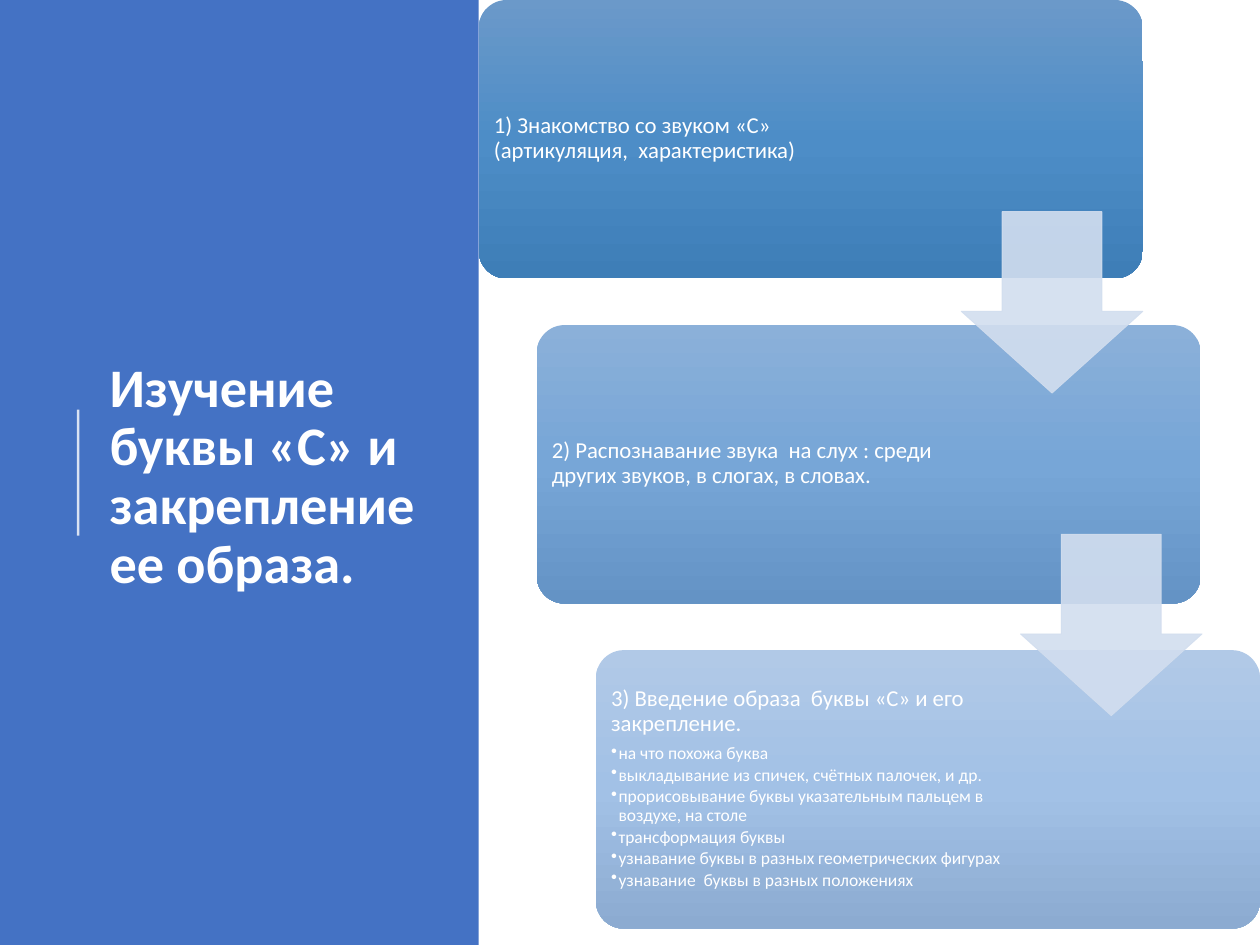
import copy
import lxml.etree
import pptx
import pptx.dml.color
import pptx.enum.shapes
import pptx.enum.text
import pptx.oxml.ns
import pptx.util

PX = 9144  # EMU per px, 100 px to the inch
THEME = {
    "font": "Calibri", "panel": "4472C4", "text": "FFFFFF", "arrow": "D2DEEF",
    "title": 31, "step": 13, "item": 10,
    "grads": [("6B99C9", "4D8DC7", "3E7EB7"),
              ("8BB0D9", "77A6D7", "6493C5"),
              ("B1C9E7", "A2C1E6", "8CABD1")],
}
STEPS = [
    ["1) Знакомство со звуком «С» (артикуляция,  характеристика)"],
    ["2) Распознавание звука  на слух : среди других звуков, в слогах, в словах."],
    ["3) Введение образа  буквы «С» и его закрепление.",
     "на что похожа буква",
     "выкладывание из спичек, счётных палочек, и др.",
     "прорисовывание буквы указательным пальцем в воздухе, на столе",
     "трансформация буквы",
     "узнавание буквы в разных геометрических фигурах",
     "узнавание  буквы в разных положениях"],
]
WIDTHS = [288, 324, 324]
KIND = pptx.enum.shapes.MSO_SHAPE
MID = pptx.enum.text.MSO_ANCHOR.MIDDLE
LEFT = pptx.enum.text.PP_ALIGN.LEFT
rgb = pptx.dml.color.RGBColor.from_string
qn = pptx.oxml.ns.qn


def style(par, size, bold=False):
    par.alignment = LEFT
    par.line_spacing = 0.9
    for run in par.runs:
        run.font.name = THEME["font"]
        run.font.size = pptx.util.Pt(size)
        run.font.bold = bold
        run.font.color.rgb = rgb(THEME["text"])


def fade(shape, share):
    for color in shape._element.spPr.iter(qn("a:srgbClr")):
        lxml.etree.SubElement(color, qn("a:alpha")).set("val", str(share * 1000))


prs = pptx.Presentation()
prs.slide_width, prs.slide_height = 1000 * PX, 750 * PX
slide = prs.slides.add_slide(prs.slide_layouts[5])
shapes = slide.shapes

# Left panel, behind the title
panel = shapes.add_shape(KIND.RECTANGLE, 0, 0, 380 * PX, 750 * PX)
panel.shadow.inherit = False
panel.fill.solid()
panel.fill.fore_color.rgb = rgb(THEME["panel"])
panel.line.fill.background()
shapes._spTree.insert(2, panel._element)

# Accent line
rule = shapes.add_connector(pptx.enum.shapes.MSO_CONNECTOR.STRAIGHT,
                            62 * PX, 425 * PX, 62 * PX, 325 * PX)
rule.line.width = pptx.util.Pt(1.5)
rule.line.color.rgb = rgb(THEME["text"])
lxml.etree.SubElement(rule._element.spPr, qn("a:effectLst"))
fade(rule, 80)

# Title
title = shapes.title
title.left, title.top, title.width, title.height = [n * PX for n in (77, 78, 276, 602)]
frame = title.text_frame
frame.text = "Изучение буквы «С» и закрепление ее образа."
frame.word_wrap = True
frame.auto_size = pptx.enum.text.MSO_AUTO_SIZE.NONE
frame.vertical_anchor = MID
style(frame.paragraphs[0], THEME["title"], True)

# Steps: a card and its text
for i, (lines, grad, width) in enumerate(zip(STEPS, THEME["grads"], WIDTHS)):
    left, top = 380 + 93 * i // 2, 258 * i
    card = shapes.add_shape(KIND.ROUNDED_RECTANGLE, left * PX, top * PX, 527 * PX, 221 * PX)
    card.adjustments[0] = 0.1
    card.shadow.inherit = False
    card.line.fill.background()
    card.fill.gradient()
    card.fill.gradient_angle = 270
    first = card._element.spPr.find(".//" + qn("a:gs"))
    first.addnext(copy.deepcopy(first))
    for k, (stop, color) in enumerate(zip(card.fill.gradient_stops, grad)):
        stop.position = k / 2
        stop.color.rgb = rgb(color)

    box = shapes.add_textbox((left + 7) * PX, (top + 6) * PX, width * PX, 208 * PX)
    frame = box.text_frame
    frame.word_wrap = True
    frame.vertical_anchor = MID
    frame.margin_left = frame.margin_right = 5 * PX
    frame.margin_top = frame.margin_bottom = 5 * PX
    frame.text = "\n".join(lines)
    head, *items = frame.paragraphs
    style(head, THEME["step"])
    head.space_after = pptx.util.Pt(4.55)
    for par in items:
        style(par, THEME["item"])
        par.level = 1
        par.space_after = pptx.util.Pt(1.5)
        props = par._p.get_or_add_pPr()
        props.set("marL", str(6 * PX))
        props.set("indent", str(-6 * PX))
        lxml.etree.SubElement(props, qn("a:buChar")).set("char", "•")

# Arrows between the steps
for i in range(2):
    arrow = shapes.add_shape(KIND.DOWN_ARROW, (763 + 47 * i) * PX, (168 + 256 * i) * PX,
                             144 * PX, 144 * PX)
    # The shaft takes 55 % of the width, the head 45 % of the height
    arrow.adjustments[0], arrow.adjustments[1] = 0.55, 0.45
    arrow.shadow.inherit = False
    arrow.fill.solid()
    arrow.fill.fore_color.rgb = rgb(THEME["arrow"])
    arrow.line.color.rgb = rgb(THEME["arrow"])
    arrow.line.width = pptx.util.Pt(0.5)
    fade(arrow, 90)

prs.save("out.pptx")
